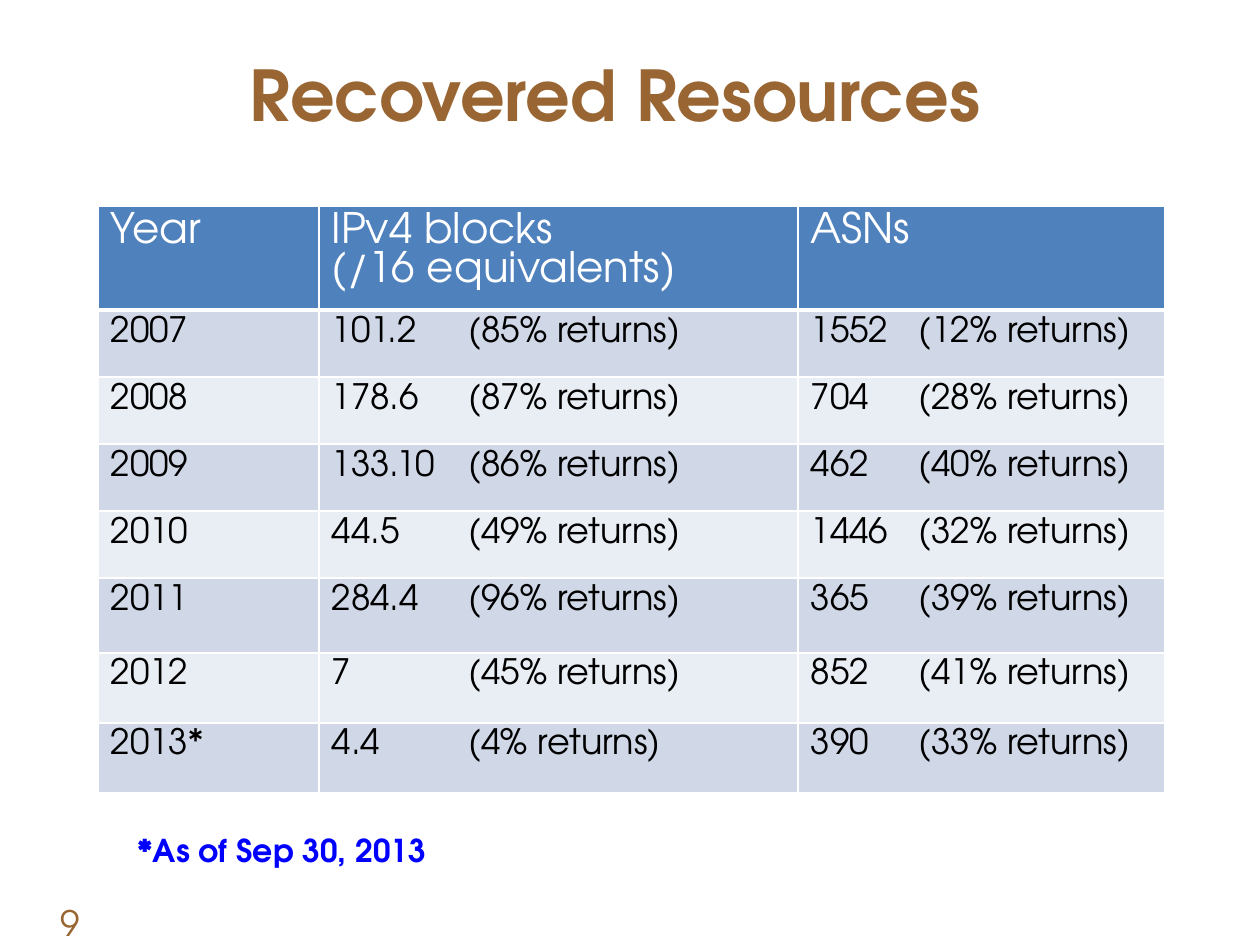
"""Build the slide of recovered IPv4 blocks and ASNs by year."""
from lxml import etree
from pptx import Presentation
from pptx.dml.color import RGBColor
from pptx.enum.text import MSO_ANCHOR, PP_ALIGN
from pptx.oxml.ns import qn
from pptx.util import Pt

CENTER, MIDDLE = PP_ALIGN.CENTER, MSO_ANCHOR.MIDDLE

TITLE = "Recovered Resources"
NOTE = "*As of Sep 30, 2013"
PAGE = "9"
HEAD = ("Year", "IPv4 blocks\n(/16 equivalents)", "ASNs")
ROWS = [
    ("2007", "101.2\t(85% returns)", "1552\t(12% returns)"),
    ("2008", "178.6\t(87% returns)", "704\t(28% returns)"),
    ("2009", "133.10\t(86% returns)", "462\t(40% returns)"),
    ("2010", "44.5\t(49% returns)", "1446\t(32% returns)"),
    ("2011", "284.4\t(96% returns)", "365\t(39% returns)"),
    ("2012", "7\t(45% returns)", "852\t(41% returns)"),
    ("2013*", "4.4\t(4% returns)", "390\t(33% returns)"),
]
WIDTHS = (221, 479, 367)
HEIGHTS = (104, 67, 67, 67, 67, 75, 70, 70)
TABS = (None, 137, 108)

THEME = {
    "font": "TeX Gyre Adventor",
    "brown": "996633", "blue": "0000FF", "ink": "000000", "white": "FFFFFF",
    "head": "4F81BD", "bands": ("D0D8E8", "E9EDF4"),
    "title": 40, "top": 24, "body": 20, "note": 18,
    "lead": 0.93, "rule": 1, "thick": 3,
}


def px(n):
    return round(n * 914400 / 126)


def style(par, size, color, bold=False):
    font = par.font
    font.name, font.size, font.bold = THEME["font"], Pt(size), bold
    font.color.rgb = RGBColor.from_string(color)


def add_tab(par, pos):
    stops = etree.SubElement(par._p.get_or_add_pPr(), qn("a:tabLst"))
    etree.SubElement(stops, qn("a:tab"), pos=str(px(pos)), algn="l")


def edge(cell, low):
    props = cell._tc.get_or_add_tcPr()
    for i, side in enumerate("LRTB"):
        width = low if side == "B" else THEME["rule"]
        line = etree.Element(qn(f"a:ln{side}"), w=str(Pt(width)))
        fill = etree.SubElement(line, qn("a:solidFill"))
        etree.SubElement(fill, qn("a:srgbClr"), val=THEME["white"])
        props.insert(i, line)


def fill_cell(cell, text, size, color, back, low, tab):
    cell.text = text
    cell.fill.solid()
    cell.fill.fore_color.rgb = RGBColor.from_string(back)
    edge(cell, low)
    for par in cell.text_frame.paragraphs:
        par.line_spacing = Pt(size * THEME["lead"])
        if "\t" in text:
            add_tab(par, tab)
        style(par, size, color)


def add_grid(slide):
    data = [HEAD, *ROWS]
    grid = slide.shapes.add_table(
        len(data), len(HEAD), px(98), px(206), px(sum(WIDTHS)), px(sum(HEIGHTS))
    ).table
    for col, width in zip(grid.columns, WIDTHS):
        col.width = px(width)
    for row, height in zip(grid.rows, HEIGHTS):
        row.height = px(height)
    for r, texts in enumerate(data):
        if r == 0:
            look = THEME["top"], THEME["white"], THEME["head"], THEME["thick"]
        else:
            band = THEME["bands"][(r - 1) % 2]
            look = THEME["body"], THEME["ink"], band, THEME["rule"]
        for c, text in enumerate(texts):
            fill_cell(grid.cell(r, c), text, *look, TABS[c])


def add_label(slide, text, box, size, color, bold=False, wrap=True):
    frame = slide.shapes.add_textbox(*map(px, box)).text_frame
    frame.word_wrap = wrap
    frame.text = text
    style(frame.paragraphs[0], size, color, bold)


def main():
    deck = Presentation()
    deck.slide_width, deck.slide_height = px(1260), px(945)
    slide = deck.slides.add_slide(deck.slide_layouts[5])
    title = slide.shapes.title
    title.left, title.top, title.width, title.height = map(px, (48, 28, 1134, 131))
    title.text = TITLE
    title.text_frame.vertical_anchor = MIDDLE
    par = title.text_frame.paragraphs[0]
    par.alignment = CENTER
    style(par, THEME["title"], THEME["brown"], True)
    add_grid(slide)
    add_label(slide, PAGE, (48, 895, 98, 50), THEME["body"], THEME["brown"])
    add_label(slide, NOTE, (125, 825, 315, 50), THEME["note"], THEME["blue"], True, False)
    deck.save("out.pptx")


if __name__ == "__main__":
    main()
